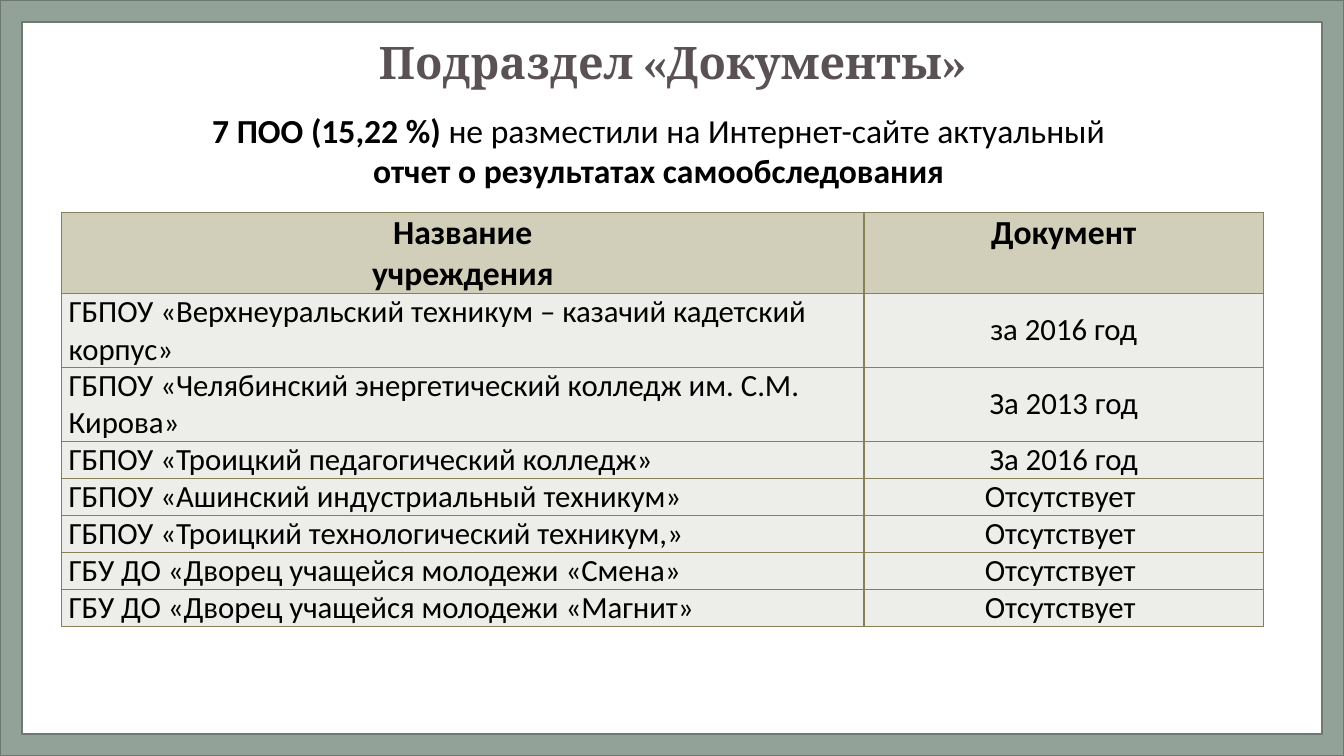
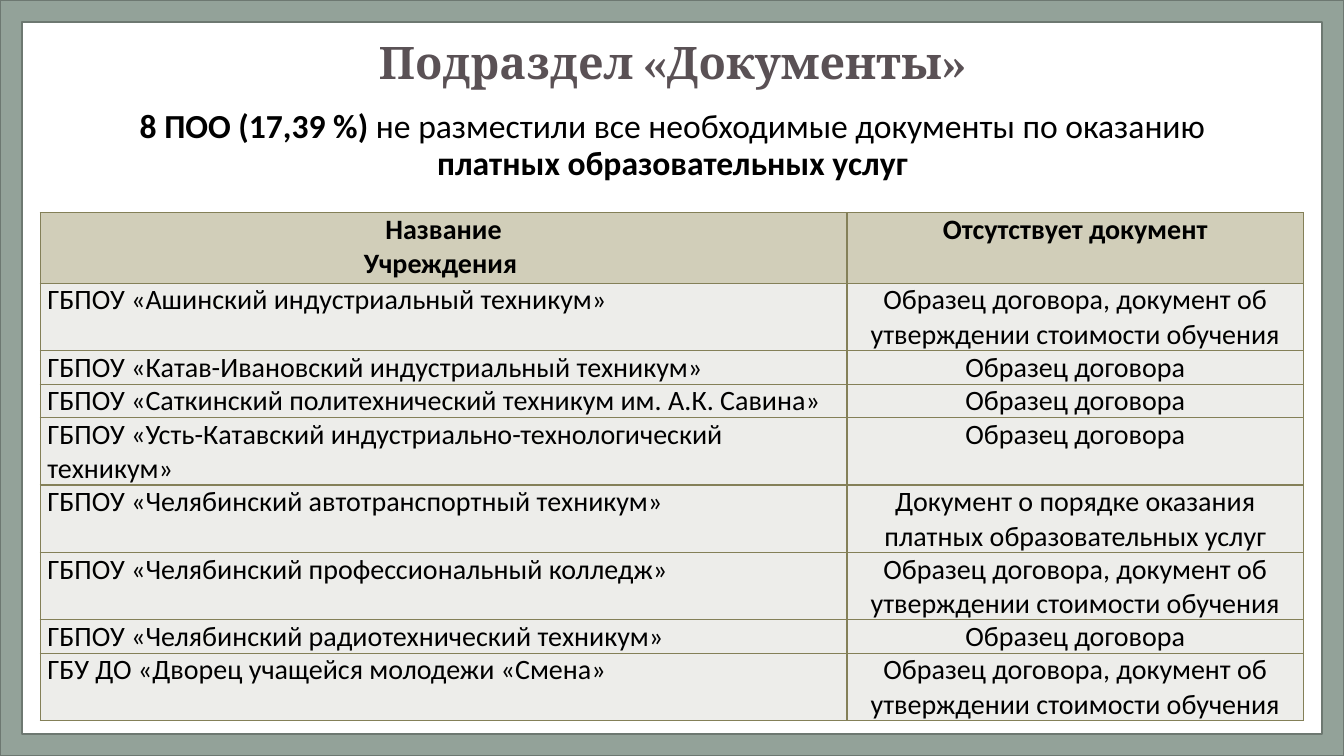
import pptx
import pptx.util
import pptx.dml.color
import pptx.enum.shapes
import pptx.enum.text
import pptx.oxml.ns
import lxml.etree

Inches, Pt = pptx.util.Inches, pptx.util.Pt
RGBColor = pptx.dml.color.RGBColor
ALIGN = pptx.enum.text.PP_ALIGN
ANCHOR = pptx.enum.text.MSO_ANCHOR

BLACK = RGBColor(0x00, 0x00, 0x00)
FRAME_FILL = RGBColor(0x93, 0xA2, 0x99)
FRAME_LINE = RGBColor(0x6D, 0x78, 0x71)
TITLE_COLOR = RGBColor(0x5A, 0x51, 0x55)
HEADER_FILL = RGBColor(0xD1, 0xCE, 0xB9)
ROW_FILL = RGBColor(0xED, 0xED, 0xEA)
BORDER = RGBColor(0x84, 0x80, 0x58)

SLIDE_SIZE = (Inches(13.33), Inches(7.5))
TITLE_BOX = (0.92, 0.24, 11.5, 0.8)
TABLE_TOP = 2.11
TITLE = "Подраздел «Документы»"

SAMPLE = "Образец договора"
SAMPLE_AND_COST = "Образец договора, документ об утверждении стоимости обучения"
MISSING = "Отсутствует "

# Each table row: institution, document, number of text lines
REPORT_ROWS = [
    ("ГБПОУ «Верхнеуральский техникум – казачий кадетский корпус»", "за 2016 год", 2),
    ("ГБПОУ «Челябинский энергетический колледж им. С.М. Кирова»", "За 2013 год", 2),
    ("ГБПОУ «Троицкий педагогический колледж»", "За 2016 год", 1),
    ("ГБПОУ «Ашинский индустриальный техникум»", MISSING, 1),
    ("ГБПОУ «Троицкий технологический техникум,»", MISSING, 1),
    ("ГБУ ДО «Дворец учащейся молодежи «Смена»", MISSING, 1),
    ("ГБУ ДО «Дворец учащейся молодежи «Магнит»", MISSING, 1),
]
SERVICE_ROWS = [
    ("ГБПОУ «Ашинский индустриальный техникум»", SAMPLE_AND_COST, 2),
    ("ГБПОУ «Катав-Ивановский индустриальный техникум»", SAMPLE, 1),
    ("ГБПОУ «Саткинский политехнический техникум им. А.К. Савина»", SAMPLE, 1),
    ("ГБПОУ «Усть-Катавский индустриально-технологический техникум»", SAMPLE, 2),
    ("ГБПОУ «Челябинский автотранспортный техникум»",
     "Документ о порядке оказания платных образовательных услуг", 2),
    ("ГБПОУ «Челябинский профессиональный колледж»", SAMPLE_AND_COST, 2),
    ("ГБПОУ «Челябинский радиотехнический техникум»", SAMPLE, 1),
    ("ГБУ ДО «Дворец учащейся молодежи «Смена»", SAMPLE_AND_COST, 2),
]


def write(frame, paragraphs, size, font="Calibri", color=BLACK,
          align=ALIGN.CENTER, spacing=None):
    """Fill a text frame; each paragraph is a list of (text, bold) runs."""
    frame.word_wrap = True
    for index, runs in enumerate(paragraphs):
        para = frame.add_paragraph() if index else frame.paragraphs[0]
        para.alignment = align
        if spacing:
            para.line_spacing = spacing
        for text, bold in runs:
            span = para.add_run()
            span.text = text
            span.font.name = font
            span.font.size = Pt(size)
            span.font.bold = bold
            span.font.color.rgb = color


def add_text(slide, box, paragraphs, size, anchor=ANCHOR.TOP, **style):
    shape = slide.shapes.add_textbox(*map(Inches, box))
    shape.text_frame.vertical_anchor = anchor
    write(shape.text_frame, paragraphs, size, **style)


def add_framed_slide(deck):
    """Add a slide with the border and title that all slides share."""
    slide = deck.slides.add_slide(deck.slide_layouts[6])
    border = slide.shapes.add_shape(
        pptx.enum.shapes.MSO_SHAPE.FRAME, 0, 0, *SLIDE_SIZE)
    border.adjustments[0] = 0.029
    border.shadow.inherit = False
    border.fill.solid()
    border.fill.fore_color.rgb = FRAME_FILL
    border.line.color.rgb = FRAME_LINE
    border.line.width = Pt(1)
    add_text(slide, TITLE_BOX, [[(TITLE, True)]], 32, ANCHOR.MIDDLE,
             font="Cambria", color=TITLE_COLOR, spacing=0.9)
    return slide


def outline_cell(cell):
    properties = cell._tc.get_or_add_tcPr()
    qn = pptx.oxml.ns.qn
    for position, side in enumerate(("lnL", "lnR", "lnT", "lnB")):
        line = lxml.etree.Element(qn("a:" + side), w=str(Pt(1)))
        fill = lxml.etree.SubElement(line, qn("a:solidFill"))
        lxml.etree.SubElement(fill, qn("a:srgbClr"), val=str(BORDER))
        properties.insert(position, line)


def fill_cell(cell, paragraphs, size, fill, margin, anchor, align=ALIGN.CENTER):
    cell.margin_left = cell.margin_right = Inches(margin)
    cell.margin_top = cell.margin_bottom = 0
    cell.vertical_anchor = anchor
    cell.fill.solid()
    cell.fill.fore_color.rgb = fill
    outline_cell(cell)
    write(cell.text_frame, paragraphs, size, align=align)


def add_institution_table(slide, left, widths, headers, rows, header_size,
                          size, line_height, document_anchor):
    """Add a two-column table; each header is a list of lines."""
    heights = [0.04 + 2 * line_height] + [lines * line_height for *_, lines in rows]
    table = slide.shapes.add_table(
        len(heights), len(widths), Inches(left), Inches(TABLE_TOP),
        Inches(sum(widths)), Inches(sum(heights))).table
    for column, width in zip(table.columns, widths):
        column.width = Inches(width)
    for row, height in zip(table.rows, heights):
        row.height = Inches(height)
    for column, lines in enumerate(headers):
        fill_cell(table.cell(0, column), [[(line, True)] for line in lines],
                  header_size, HEADER_FILL, 0.06, ANCHOR.TOP)
    for number, (name, document, _) in enumerate(rows, 1):
        fill_cell(table.cell(number, 0), [[(name, False)]], size, ROW_FILL,
                  0.07, ANCHOR.TOP, ALIGN.LEFT)
        fill_cell(table.cell(number, 1), [[(document, False)]], size, ROW_FILL,
                  0.07, document_anchor)


def add_report_slide(deck):
    slide = add_framed_slide(deck)
    add_text(slide, (0.82, 1.04, 11.5, 0.91), [
        [("7 ПОО (15,22 %) ", True),
         ("не разместили на Интернет-сайте актуальный ", False)],
        [("отчет о результатах самообследования ", True)],
    ], 24)
    add_institution_table(
        slide, 0.61, (7.96, 3.96), (["Название", "учреждения"], ["Документ"]),
        REPORT_ROWS, 24, 22, 0.36, ANCHOR.MIDDLE)


def add_services_slide(deck):
    slide = add_framed_slide(deck)
    add_text(slide, (0.92, 1.04, 11.5, 0.89), [
        [("8 ПОО (17,39 %) ", True),
         ("не разместили все необходимые документы по оказанию ", False),
         ("платных образовательных услуг", True)],
    ], 24, spacing=0.9)
    add_institution_table(
        slide, 0.4, (8, 4.53),
        (["Название", "Учреждения "], ["Отсутствует документ"]),
        SERVICE_ROWS, 20, 20, 0.33, ANCHOR.TOP)


def main():
    deck = pptx.Presentation()
    deck.slide_width, deck.slide_height = SLIDE_SIZE
    add_report_slide(deck)
    add_services_slide(deck)
    deck.save("out.pptx")


if __name__ == "__main__":
    main()
